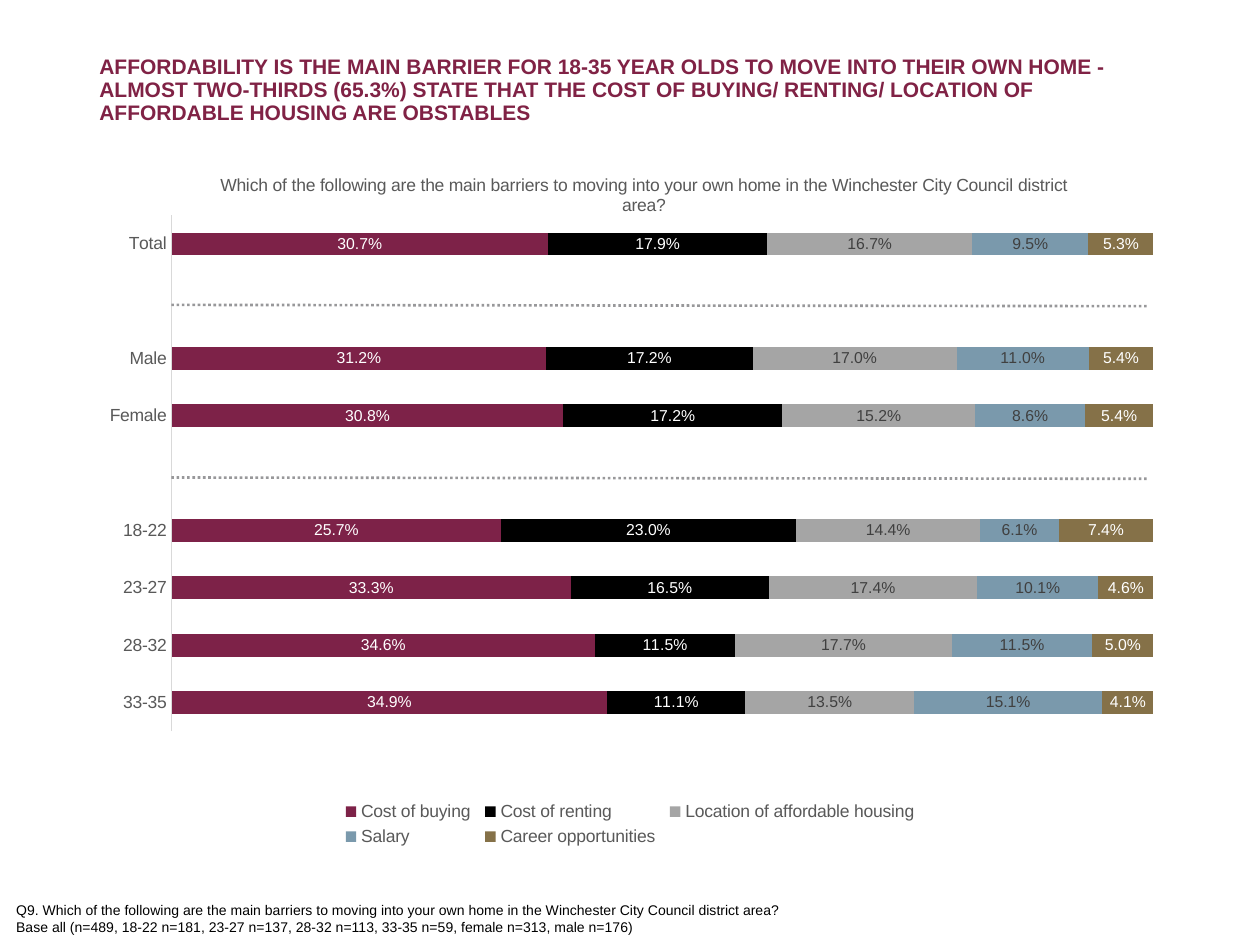
"""Build the slide on barriers to moving into a first home."""
from lxml import etree
from pptx import Presentation
from pptx.chart.data import CategoryChartData
from pptx.dml.color import RGBColor
from pptx.enum.chart import XL_CHART_TYPE, XL_LABEL_POSITION, XL_LEGEND_POSITION, XL_TICK_MARK
from pptx.enum.dml import MSO_LINE
from pptx.enum.shapes import MSO_CONNECTOR
from pptx.oxml.ns import qn
from pptx.util import Inches, Pt

STACKED_BAR = XL_CHART_TYPE.BAR_STACKED_100
CENTER = XL_LABEL_POSITION.CENTER
BOTTOM = XL_LEGEND_POSITION.BOTTOM
NO_TICK = XL_TICK_MARK.NONE
DOTTED = MSO_LINE.ROUND_DOT
STRAIGHT = MSO_CONNECTOR.STRAIGHT

WHITE = RGBColor(0xFF, 0xFF, 0xFF)
BLACK = RGBColor(0, 0, 0)
CLARET = RGBColor(0x80, 0x22, 0x45)
PLUM = RGBColor(0x7D, 0x22, 0x48)
GREY = RGBColor(0xA5, 0xA5, 0xA5)
BLUE = RGBColor(0x7A, 0x99, 0xAC)
BRONZE = RGBColor(0x85, 0x71, 0x48)
CHARCOAL = RGBColor(0x40, 0x40, 0x40)
TEXT_GREY = RGBColor(0x59, 0x59, 0x59)
AXIS_GREY = RGBColor(0xD9, 0xD9, 0xD9)
RULE_GREY = RGBColor(0x98, 0x98, 0x9A)

HEADLINE = (
    "AFFORDABILITY IS THE MAIN BARRIER FOR 18-35 YEAR OLDS TO MOVE INTO THEIR OWN HOME - "
    "ALMOST TWO-THIRDS (65.3%) STATE THAT THE COST OF BUYING/ RENTING/ LOCATION OF "
    "AFFORDABLE HOUSING ARE OBSTABLES"
)
QUESTION = (
    "Which of the following are the main barriers to moving into your own home "
    "in the Winchester City Council district area?"
)
FOOTNOTE = [
    f"Q9. {QUESTION}",
    "Base all (n=489, 18-22 n=181, 23-27 n=137, 28-32 n=113, 33-35 n=59, female n=313, male n=176)",
]
GROUPS = ["33-35", "28-32", "23-27", "18-22", "", "Female", "Male", "", "Total"]
BARRIERS = [
    ("Cost of buying", PLUM, WHITE,
     [0.349, 0.346, 0.333, 0.257, None, 0.308, 0.312, None, 0.307]),
    ("Cost of renting", BLACK, WHITE,
     [0.111, 0.115, 0.165, 0.23, None, 0.172, 0.172, None, 0.179]),
    ("Location of affordable housing", GREY, CHARCOAL,
     [0.135, 0.177, 0.174, 0.144, None, 0.152, 0.17, None, 0.167]),
    ("Salary", BLUE, CHARCOAL,
     [0.151, 0.115, 0.101, 0.061, None, 0.086, 0.11, None, 0.095]),
    ("Career opportunities", BRONZE, WHITE,
     [0.041, 0.05, 0.046, 0.074, None, 0.054, 0.054, None, 0.053]),
]


class SlideBuilder:
    """Hold the slide and its font, and add each kind of element."""

    def __init__(self, slide, face="Arial"):
        self.slide = slide
        self.face = face

    def style(self, font, size, color, bold=False):
        font.name = self.face
        font.size = Pt(size)
        font.color.rgb = color
        font.bold = bold

    def text(self, box, lines, size, color, bold=False, wrap=True, spacing=None):
        frame = self.slide.shapes.add_textbox(*map(Inches, box)).text_frame
        frame.word_wrap = wrap
        frame.text = "\n".join(lines)
        for paragraph in frame.paragraphs:
            paragraph.line_spacing = spacing
            self.style(paragraph.font, size, color, bold)

    def place(self, part, index, **settings):
        for old in part.findall(qn("c:layout")):
            part.remove(old)
        layout = etree.Element(qn("c:layout"))
        manual = etree.SubElement(layout, qn("c:manualLayout"))
        for tag, value in settings.items():
            etree.SubElement(manual, qn(f"c:{tag}")).set("val", str(value))
        part.insert(index, layout)

    def stacked_bars(self, box, title, categories, series_rows):
        data = CategoryChartData(number_format="0.0%")
        data.categories = categories
        for name, _, _, values in series_rows:
            data.add_series(name, values)
        chart = self.slide.shapes.add_chart(STACKED_BAR, *map(Inches, box), data).chart
        self.style(chart.font, 10, TEXT_GREY)

        chart.has_title = True
        heading = chart.chart_title.text_frame
        heading.text = title
        self.style(heading.paragraphs[0].font, 10, TEXT_GREY)

        chart.has_legend = True
        chart.legend.position = BOTTOM
        chart.legend.include_in_layout = False
        self.style(chart.legend.font, 10, TEXT_GREY)

        axis = chart.category_axis
        axis.major_tick_mark = axis.minor_tick_mark = NO_TICK
        axis.format.line.color.rgb = AXIS_GREY
        axis.format.line.width = Pt(0.75)
        self.style(axis.tick_labels.font, 10, TEXT_GREY)
        chart.value_axis.visible = False
        chart.value_axis.has_major_gridlines = False

        plot = chart.plots[0]
        plot.vary_by_categories = False
        plot.gap_width = 150
        plot.overlap = 100
        for series, (_, fill, label_color, _) in zip(plot.series, series_rows):
            series.format.fill.solid()
            series.format.fill.fore_color.rgb = fill
            labels = series.data_labels
            labels.show_value = True
            labels.position = CENTER
            labels.number_format = "0.0%"
            labels.number_format_is_linked = False
            self.style(labels.font, 9, label_color)

        root = chart._chartSpace
        self.place(root.find(f".//{qn('c:plotArea')}"), 0, layoutTarget="inner",
                   xMode="edge", yMode="edge", x=0.078, y=0.075, w=0.904, h=0.75)
        self.place(root.find(f".//{qn('c:title')}"), 1,
                   xMode="edge", yMode="edge", x=0.12, y=0.01)
        self.place(root.find(f".//{qn('c:legend')}"), 1,
                   xMode="edge", yMode="edge", x=0.23, y=0.92, w=0.54, h=0.08)

    def dotted_rule(self, left, top, right, bottom):
        rule = self.slide.shapes.add_connector(STRAIGHT, *map(Inches, (left, top, right, bottom)))
        rule.line.color.rgb = RULE_GREY
        rule.line.width = Pt(1.5)
        rule.line.dash_style = DOTTED
        etree.SubElement(rule._element.spPr, qn("a:effectLst"))


def main():
    deck = Presentation()
    deck.slide_width, deck.slide_height = Inches(10), Inches(7.5)
    page = SlideBuilder(deck.slides.add_slide(deck.slide_layouts[6]))
    page.text((0.69, 0.4, 8.62, 0.64), [HEADLINE], 12, CLARET, bold=True, spacing=0.9)
    page.stacked_bars((0.69, 1.3, 8.62, 5.46), QUESTION, GROUPS, BARRIERS)
    page.text((0.03, 7.11, 6.4, 0.37), FOOTNOTE, 8, BLACK, wrap=False)
    for top in (2.42, 3.79):
        page.dotted_rule(1.36, top, 9.1, top + 0.01)
    deck.save("out.pptx")


if __name__ == "__main__":
    main()
